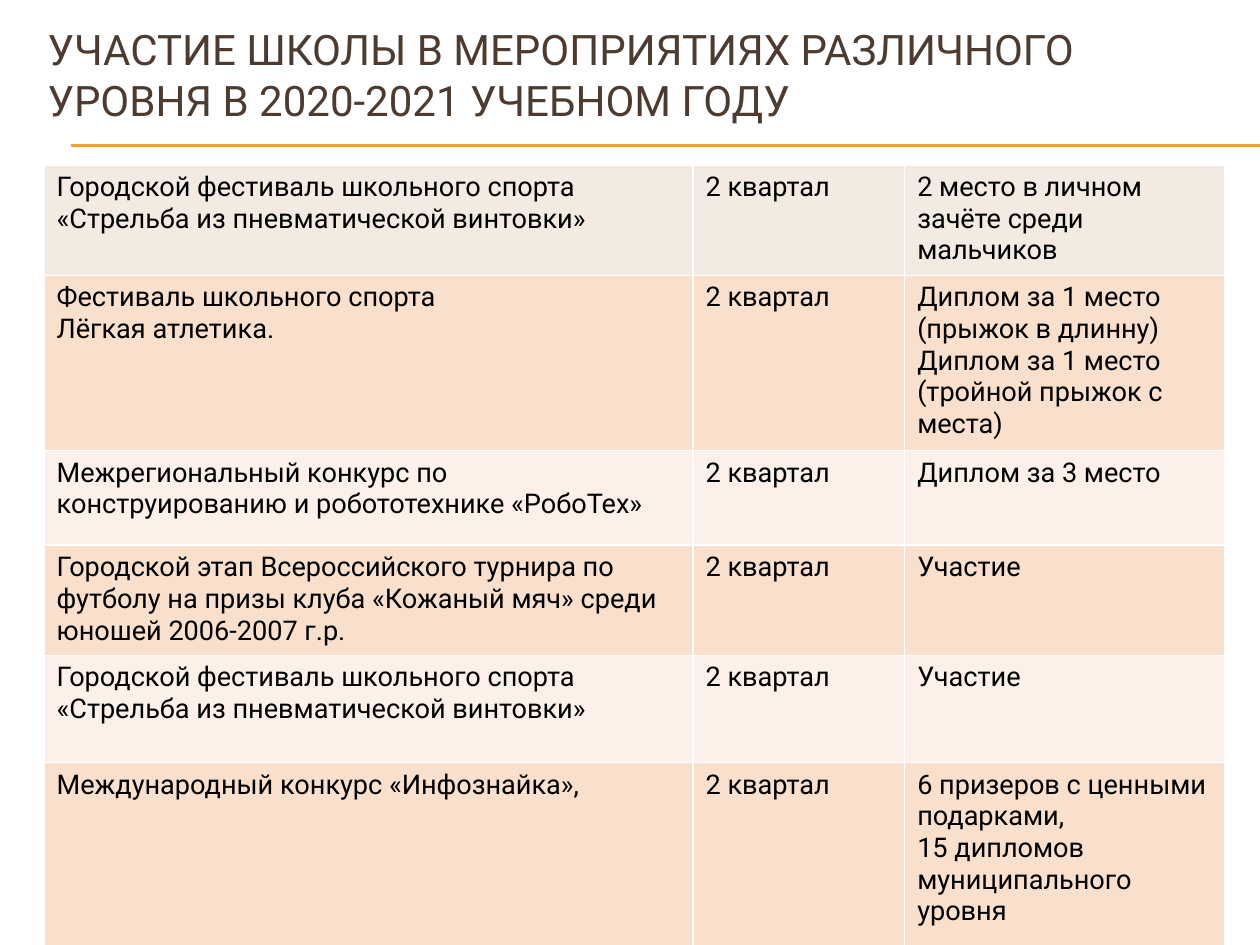
from typing import NamedTuple

from lxml.etree import SubElement
from pptx import Presentation
from pptx.dml.color import RGBColor
from pptx.enum.shapes import MSO_CONNECTOR
from pptx.enum.text import MSO_ANCHOR
from pptx.oxml.ns import qn
from pptx.util import Inches, Pt

COLORS = {"title": "4E3B30", "text": "000000", "rule": "F0A22E", "border": "FFFFFF",
          "head": "F3EAE2", "dark": "F9E0CD", "light": "FCF0E8"}
FONT = "Roboto"
COL_WIDTHS = (5.15, 1.68, 2.54)
QUARTER = "2 квартал"
SHOOTING = "Городской фестиваль школьного спорта «Стрельба из пневматической винтовки»"


class Event(NamedTuple):
    name: str
    result: str
    height: float


EVENTS = [
    Event(SHOOTING, "2 место в личном зачёте среди мальчиков", 0.85),
    Event("Фестиваль школьного спорта\nЛёгкая атлетика.",
          "Диплом за 1 место (прыжок в длинну)\n"
          "Диплом за 1 место (тройной прыжок с места)", 1.36),
    Event("Межрегиональный конкурс по конструированию и робототехнике «РобоТех»",
          "Диплом за 3 место", 0.75),
    Event("Городской этап Всероссийского турнира по футболу на призы клуба "
          "«Кожаный мяч» среди юношей 2006-2007 г.р.", "Участие", 0.85),
    Event(SHOOTING, "Участие", 0.85),
    Event("Международный конкурс «Инфознайка»,",
          "6 призеров с ценными подарками,\n15 дипломов муниципального уровня", 1.52),
]


def rgb(name: str) -> RGBColor:
    return RGBColor.from_string(COLORS[name])


def write(tf, text: str, size: float, color: str) -> None:
    tf.text = text
    for p in tf.paragraphs:
        for r in p.runs:
            r.font.name = FONT
            r.font.size = Pt(size)
            r.font.color.rgb = rgb(color)


def add_rule(s, y: float) -> None:
    line = s.shapes.add_connector(MSO_CONNECTOR.STRAIGHT, Inches(0.56), Inches(y),
                                  Inches(10), Inches(y))
    line.line.color.rgb = rgb("rule")
    line.line.width = Pt(0.75)
    SubElement(line._element.spPr, qn("a:effectLst"))


def add_title(s, text: str) -> None:
    tf = s.shapes.add_textbox(Inches(0.28), Inches(0.13), Inches(9.5), Inches(0.92)).text_frame
    tf.word_wrap = True
    tf.vertical_anchor = MSO_ANCHOR.MIDDLE
    write(tf, text, 24, "title")


def fill_cell(cell, text: str, color: str) -> None:
    write(cell.text_frame, text, 15.5, "text")
    pr = cell._tc.get_or_add_tcPr()
    for side in ("lnL", "lnR", "lnT", "lnB"):
        ln = SubElement(pr, qn(f"a:{side}"), w=str(Pt(1)))
        SubElement(SubElement(ln, qn("a:solidFill")), qn("a:srgbClr"), val=COLORS["border"])
    cell.fill.solid()
    cell.fill.fore_color.rgb = rgb(color)


def add_events(s, events: list[Event]) -> None:
    height = sum(event.height for event in events)
    table = s.shapes.add_table(len(events), len(COL_WIDTHS), Inches(0.35), Inches(1.31),
                               Inches(sum(COL_WIDTHS)), Inches(height)).table
    for column, width in zip(table.columns, COL_WIDTHS):
        column.width = Inches(width)
    for i, event in enumerate(events):
        table.rows[i].height = Inches(event.height)
        color = "head" if i == 0 else "dark" if i % 2 else "light"
        for j, text in enumerate((event.name, QUARTER, event.result)):
            fill_cell(table.cell(i, j), text, color)


def main() -> None:
    """Build the slide of school events and their results."""
    prs = Presentation()
    prs.slide_width, prs.slide_height = Inches(10), Inches(7.5)
    s = prs.slides.add_slide(prs.slide_layouts[6])
    for y in (1.15, 1.16):
        add_rule(s, y)
    add_title(s, "УЧАСТИЕ ШКОЛЫ В МЕРОПРИЯТИЯХ РАЗЛИЧНОГО УРОВНЯ В 2020-2021 УЧЕБНОМ ГОДУ")
    add_events(s, EVENTS)
    prs.save("out.pptx")


if __name__ == "__main__":
    main()
